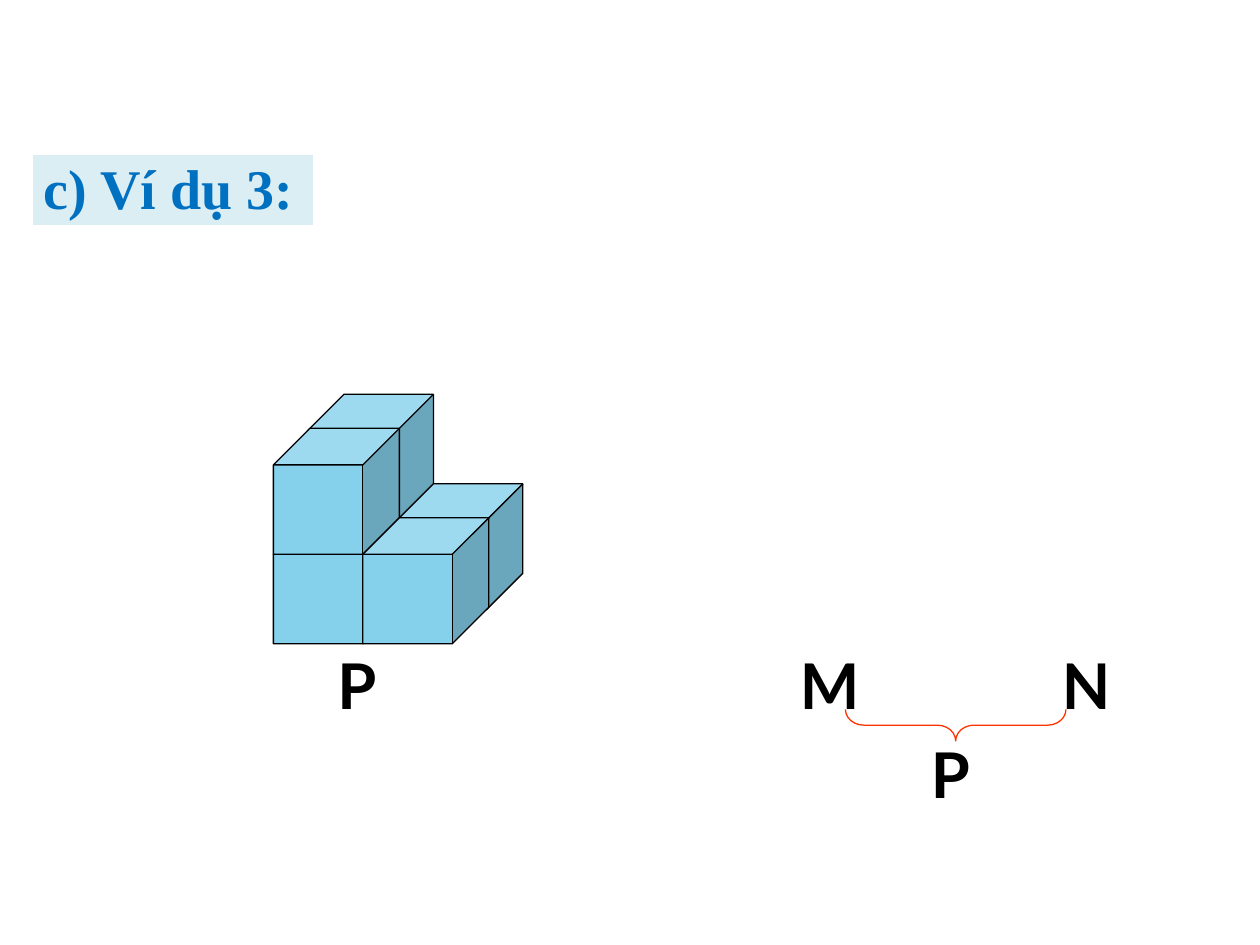
from dataclasses import dataclass

from pptx import Presentation
from pptx.dml.color import RGBColor
from pptx.enum.shapes import MSO_SHAPE
from pptx.util import Inches, Pt


@dataclass(frozen=True)
class Theme:
    """Colours, fonts and sizes of the slide."""
    cube: str = "85D0EB"
    ink: str = "000000"
    brace: str = "FF3300"
    band: str = "DBEEF4"
    band_line: str = "FFFFFF"
    title: str = "0070C0"
    title_font: str = "Times New Roman"
    label_font: str = "Lato"
    title_size: int = 32
    label_size: int = 36
    thin: float = 0.75
    thick: float = 2


THEME = Theme()


def add_text(page, text, left, top, width, height, font=THEME.label_font,
             size=THEME.label_size, color=THEME.ink):
    """Add a bold one-line text box."""
    box = page.shapes.add_textbox(Inches(left), Inches(top), Inches(width), Inches(height))
    box.text_frame.word_wrap = True
    span = box.text_frame.paragraphs[0].add_run()
    span.text = text
    span.font.name = font
    span.font.size = Pt(size)
    span.font.bold = True
    span.font.color.rgb = RGBColor.from_string(color)


def add_figure(page, kind, left, top, width, height, fill=None,
               line=THEME.ink, weight=THEME.thin):
    """Add a preset shape with a flat fill and outline."""
    figure = page.shapes.add_shape(kind, Inches(left), Inches(top), Inches(width), Inches(height))
    figure.shadow.inherit = False
    if fill:
        figure.fill.solid()
        figure.fill.fore_color.rgb = RGBColor.from_string(fill)
    else:
        figure.fill.background()
    figure.line.color.rgb = RGBColor.from_string(line)
    figure.line.width = Pt(weight)
    return figure


def add_cubes(page):
    """Stack unit cubes in three rows, each drawn from back to front."""
    side, depth, step = 0.71, 0.29, 0.27
    for column, level in ((0, 0), (0, 1), (1, 0)):
        for nearness in range(2):
            left = 2.44 + column * side - nearness * step
            top = 3.84 - level * side + nearness * step
            cube = add_figure(page, MSO_SHAPE.CUBE, left, top, 1, 1, fill=THEME.cube)
            cube.adjustments[0] = depth


def add_brace(page):
    """Add the brace that joins M and N above P."""
    brace = add_figure(page, MSO_SHAPE.LEFT_BRACE, 7.46, 4.88, 0.25, 1.75, line=THEME.brace)
    brace.rotation = 270
    brace.adjustments[0] = 0.58


def add_title(page):
    """Add the title on its tinted band."""
    add_figure(page, MSO_SHAPE.RECTANGLE, 0.25, 1.22, 2.25, 0.58, fill=THEME.band,
               line=THEME.band_line, weight=THEME.thick)
    add_text(page, "c) Ví dụ 3:", 0.25, 1.17, 2.44, 0.64, font=THEME.title_font,
             size=THEME.title_size, color=THEME.title)


def main():
    """Build and save the deck."""
    deck = Presentation()
    deck.slide_width, deck.slide_height = Inches(10), Inches(7.5)
    page = deck.slides.add_slide(deck.slide_layouts[6])
    add_cubes(page)
    add_brace(page)
    add_title(page)
    for text, left, top, width in (("P", 2.58, 5.08, 0.58), ("M", 6.25, 5.08, 0.75),
                                   ("N", 8.33, 5.08, 0.67), ("P", 7.29, 5.79, 0.58)):
        add_text(page, text, left, top, width, 0.71)
    deck.save("out.pptx")


if __name__ == "__main__":
    main()
